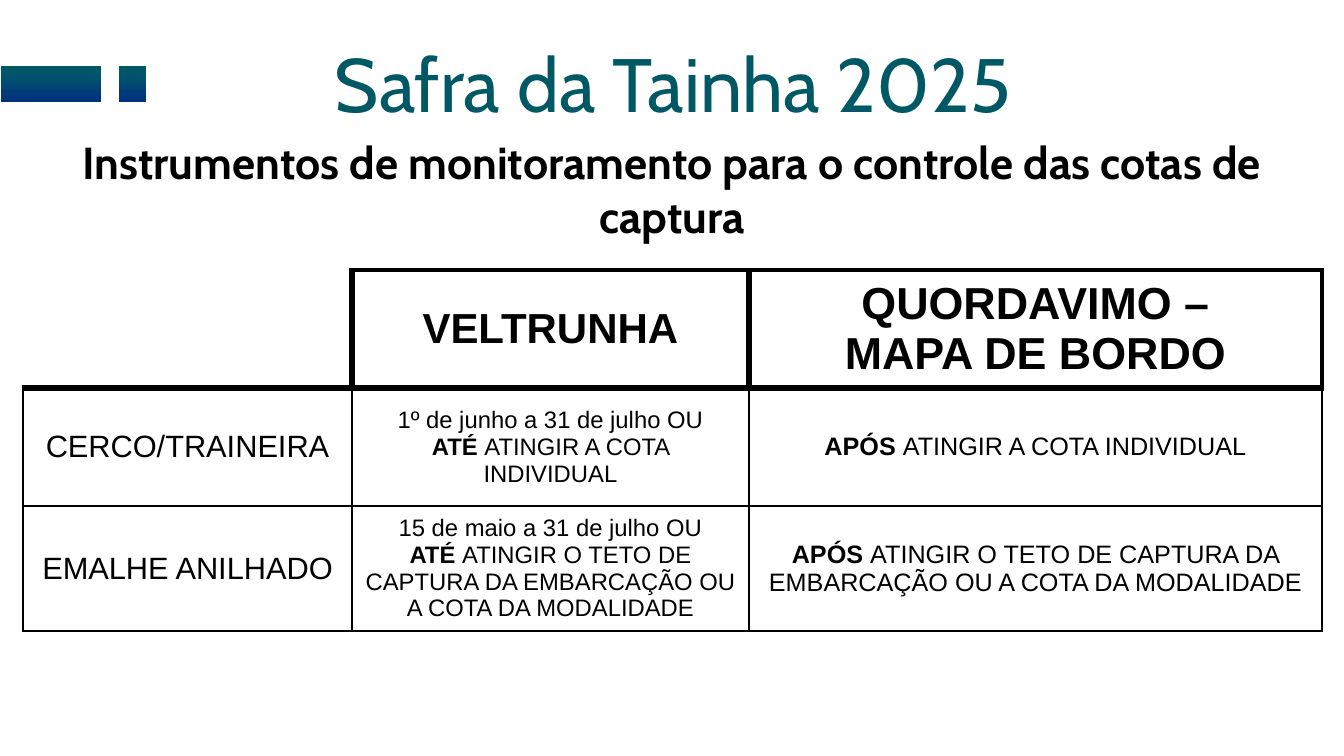
"""Slide with the monitoring instruments for the 2025 mullet season."""
from dataclasses import dataclass

from lxml import etree
from pptx import Presentation
from pptx import util as u
from pptx.dml.color import RGBColor
from pptx.enum import shapes, text
from pptx.oxml.ns import qn

SCALE = 914400 / 100.8
TEAL, BLACK = "005865", "000000"
GRADIENT = ((0, TEAL), (40, "005170"), (72, "003B78"), (100, "00317D"))
COLUMNS = (329, 397, 573)
ROWS = (118, 118, 125)
THIN = (1, 1, 1, 1)
UNDER_HEADER = (1, 1, 4.5, 1)


@dataclass
class Bar:
    left: int
    width: int


@dataclass
class Cell:
    lines: tuple[str, ...]
    size: int
    borders: tuple[float, ...]
    lead: str = ""
    bold: bool = False


BARS = (Bar(1, 100), Bar(119, 27))
CELLS = (
    (
        Cell((), 18, (0, 4.5, 0, 4.5)),
        Cell(("VELTRUNHA",), 30, (4.5, 4.5, 3, 4.5), bold=True),
        Cell(("QUORDAVIMO –", "MAPA DE BORDO"), 32, (4.5, 3, 3, 4.5), bold=True),
    ),
    (
        Cell(("CERCO/TRAINEIRA",), 22, UNDER_HEADER),
        Cell(("1º de junho a 31 de julho OU", "ATINGIR A COTA INDIVIDUAL"),
             17, UNDER_HEADER, lead="ATÉ "),
        Cell(("ATINGIR A COTA INDIVIDUAL",), 18, UNDER_HEADER, lead="APÓS "),
    ),
    (
        Cell(("EMALHE ANILHADO",), 22, THIN),
        Cell(("15 de maio a 31 de julho OU",
              "ATINGIR O TETO DE CAPTURA DA EMBARCAÇÃO OU A COTA DA MODALIDADE"),
             17, THIN, lead="ATÉ "),
        Cell(("ATINGIR O TETO DE CAPTURA DA EMBARCAÇÃO OU A COTA DA MODALIDADE",),
             18, THIN, lead="APÓS "),
    ),
)


def px(n: int) -> u.Emu:
    return u.Emu(round(n * SCALE))


def rgb(colour: str) -> RGBColor:
    return RGBColor.from_string(colour)


def set_font(p, name: str, size: int, colour: str, bold: bool | None) -> None:
    p.alignment = text.PP_ALIGN.CENTER
    p.font.name = name
    p.font.size = u.Pt(size)
    p.font.color.rgb = rgb(colour)
    p.font.bold = bold


def add_bar(s, bar: Bar) -> None:
    sp = s.shapes.add_shape(shapes.MSO_SHAPE.RECTANGLE,
                            px(bar.left), px(66), px(bar.width), px(36))
    sp.shadow.inherit = False
    sp.line.fill.background()
    sp.fill.gradient()
    sp.fill.gradient_angle = 270
    stops = sp._element.spPr.find(qn("a:gradFill")).find(qn("a:gsLst"))
    for old in list(stops):
        stops.remove(old)
    for position, colour in GRADIENT:
        stop = etree.SubElement(stops, qn("a:gs"), pos=str(position * 1000))
        etree.SubElement(stop, qn("a:srgbClr"), val=colour)


def add_heading(sp, box: tuple[int, ...], words: str, size: int, colour: str,
                bold: bool, anchor: text.MSO_ANCHOR) -> None:
    sp.left, sp.top, sp.width, sp.height = map(px, box)
    tf = sp.text_frame
    tf.word_wrap = True
    tf.auto_size = text.MSO_AUTO_SIZE.NONE
    tf.vertical_anchor = anchor
    p = tf.paragraphs[0]
    p.text = words
    set_font(p, "Cabin", size, colour, bold)


def set_borders(tc_pr, widths: tuple[float, ...]) -> None:
    for side, width in zip("LRTB", widths):
        ln = etree.SubElement(tc_pr, qn(f"a:ln{side}"), w=str(u.Pt(width)))
        if width:
            fill = etree.SubElement(ln, qn("a:solidFill"))
            etree.SubElement(fill, qn("a:srgbClr"), val=BLACK)
        else:
            etree.SubElement(ln, qn("a:noFill"))


def fill_cell(tc, cell: Cell) -> None:
    tc.vertical_anchor = text.MSO_ANCHOR.MIDDLE
    set_borders(tc._tc.get_or_add_tcPr(), cell.borders)
    tc.fill.background()
    tf = tc.text_frame
    for i, line in enumerate(cell.lines):
        p = tf.add_paragraph() if i else tf.paragraphs[0]
        set_font(p, "Arial", cell.size, BLACK, cell.bold)
        if cell.lead and i == len(cell.lines) - 1:
            r = p.add_run()
            r.text = cell.lead
            r.font.bold = True
        p.add_run().text = line


def add_quota_table(s) -> None:
    table = s.shapes.add_table(len(ROWS), len(COLUMNS), px(23), px(270),
                               px(sum(COLUMNS)), px(sum(ROWS))).table
    table.first_row = table.horz_banding = False
    for column, width in zip(table.columns, COLUMNS):
        column.width = px(width)
    for row, height, cells in zip(table.rows, ROWS, CELLS):
        row.height = px(height)
        for tc, cell in zip(row.cells, cells):
            fill_cell(tc, cell)


def main() -> None:
    prs = Presentation()
    prs.slide_width, prs.slide_height = px(1344), px(756)
    s = prs.slides.add_slide(prs.slide_layouts[5])
    for bar in BARS:
        add_bar(s, bar)
    add_heading(s.shapes.title, (198, 32, 950, 102), "Safra da Tainha 2025",
                54, TEAL, False, text.MSO_ANCHOR.TOP)
    add_heading(s.shapes.add_textbox(0, 0, 0, 0), (0, 156, 1344, 65),
                "Instrumentos de monitoramento para o controle das cotas de captura",
                32, BLACK, True, text.MSO_ANCHOR.MIDDLE)
    add_quota_table(s)
    prs.save("out.pptx")


if __name__ == "__main__":
    main()
